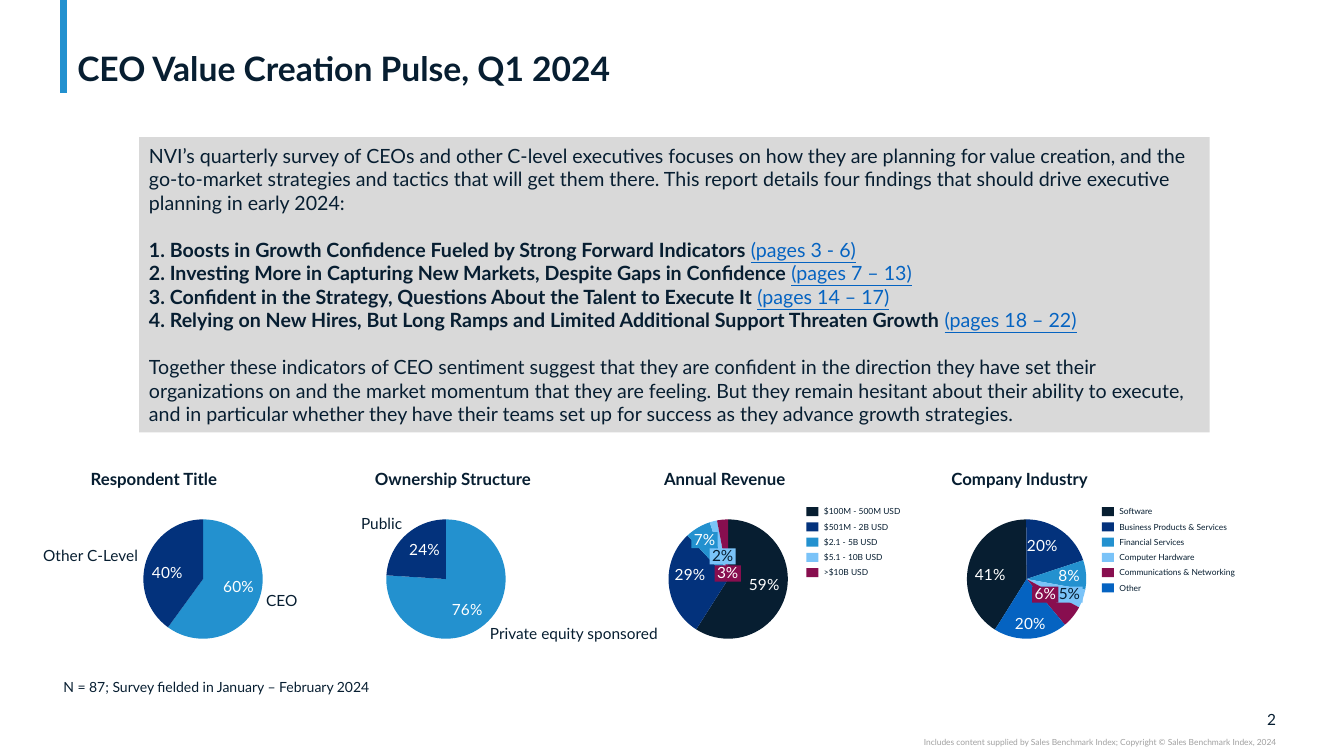
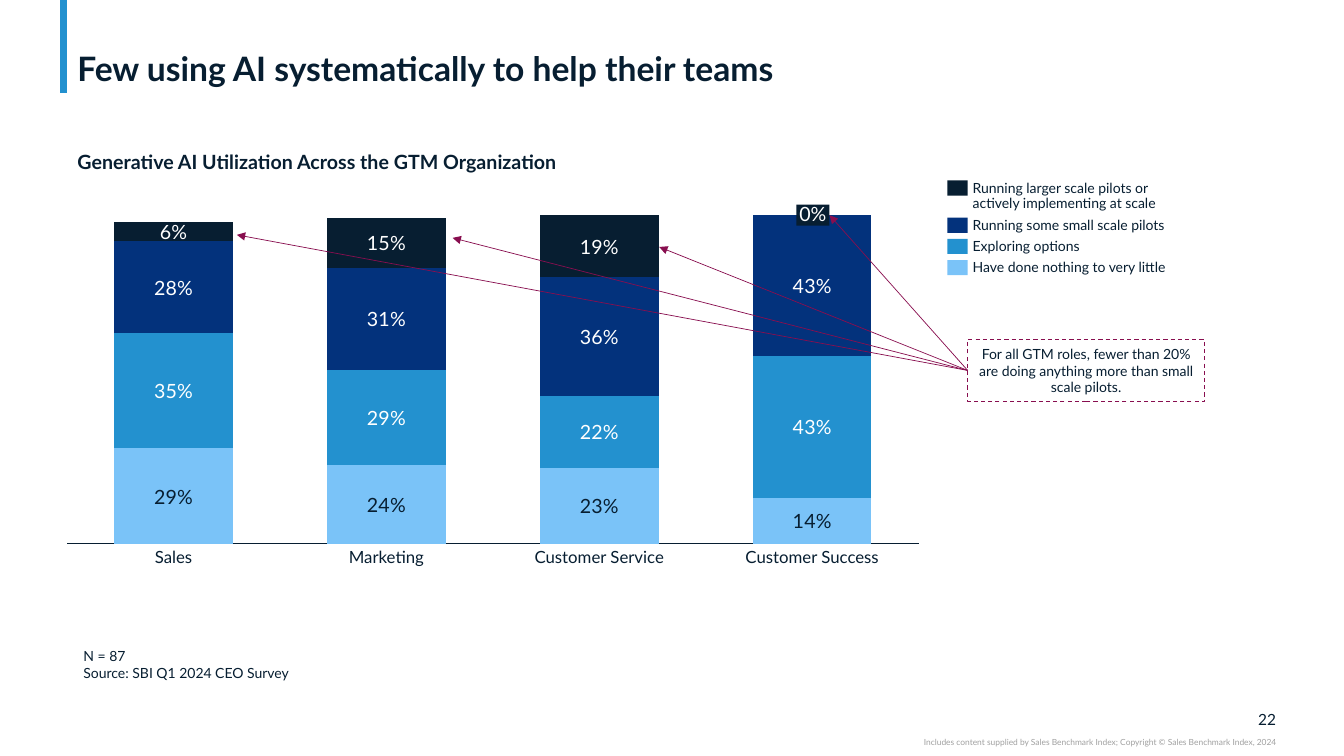
from lxml import etree
from pptx import Presentation
from pptx import util as u
from pptx.chart.data import CategoryChartData
from pptx.dml.color import RGBColor
from pptx.enum import chart as charts, dml, shapes, text
from pptx.oxml.ns import qn


class Theme:
    font = "Lato"
    ink = RGBColor.from_string("071E31")
    navy = RGBColor.from_string("03327C")
    blue = RGBColor.from_string("2391CF")
    sky = RGBColor.from_string("7AC3F8")
    wine = RGBColor.from_string("880E4F")
    link = RGBColor.from_string("0563C1")
    panel = RGBColor.from_string("D9D9D9")
    muted = RGBColor.from_string("A0A0A0")
    white = RGBColor.from_string("FFFFFF")
    title, body, heading, label, note, tiny = (u.Pt(size) for size in (24, 14, 12, 11, 10, 6))


LEFT, CENTER, RIGHT = text.PP_ALIGN.LEFT, text.PP_ALIGN.CENTER, text.PP_ALIGN.RIGHT
COLUMNS, ROWS = 80, 45

presentation = Presentation()
presentation.slide_width, presentation.slide_height = u.Inches(13.333), u.Inches(7.5)
column = presentation.slide_width / COLUMNS
row = presentation.slide_height / ROWS


def place(left, top, width, height):
    return int(left * column), int(top * row), int(width * column), int(height * row)


def add_box(slide, area, words, size, color=Theme.ink, bold=False, align=LEFT,
            padded=False, fill=None, outline=None):
    if fill is None and outline is None:
        shape = slide.shapes.add_textbox(*place(*area))
    else:
        shape = slide.shapes.add_shape(shapes.MSO_SHAPE.RECTANGLE, *place(*area))
        shape.shadow.inherit = False
        if fill is None:
            shape.fill.background()
        else:
            shape.fill.solid()
            shape.fill.fore_color.rgb = fill
        if outline is None:
            shape.line.fill.background()
        else:
            shape.line.color.rgb = outline
            shape.line.width = u.Pt(0.75)
            shape.line.dash_style = dml.MSO_LINE.DASH
    frame = shape.text_frame
    frame.word_wrap = True
    frame.vertical_anchor = text.MSO_ANCHOR.MIDDLE
    if not padded:
        frame.margin_left = frame.margin_right = frame.margin_top = frame.margin_bottom = 0
    frame.text = words
    for paragraph in frame.paragraphs:
        paragraph.alignment = align
        paragraph.line_spacing = 1.0 if padded else 0.9
        for run in paragraph.runs:
            run.font.name, run.font.size = Theme.font, size
            run.font.bold, run.font.color.rgb = bold, color
    return shape


slides = []
for title, number in (
    ("CEO Value Creation Pulse, Q1 2024", "2"),
    ("Few using AI systematically to help their teams", "22"),
):
    slide = presentation.slides.add_slide(presentation.slide_layouts[5])
    slides.append(slide)
    band = slide.shapes.add_connector(shapes.MSO_CONNECTOR.STRAIGHT, *place(3.78, 0, 3.78, 5.52))
    band.line.color.rgb, band.line.width = Theme.blue, u.Pt(5)
    etree.SubElement(band._element.spPr, qn("a:effectLst"))
    add_box(slide, (70, 42.3, 5.96, 1.14), number, Theme.label, align=RIGHT)
    add_box(slide, (45, 43.92, 30.96, 0.6),
            "Includes content supplied by Sales Benchmark Index; Copyright © Sales Benchmark Index, 2024",
            Theme.tiny, Theme.muted, align=RIGHT)
    heading = slide.shapes.title
    heading.left, heading.top, heading.width, heading.height = place(4, 0.24, 72, 5.04)
    frame = heading.text_frame
    frame.text = title
    frame.auto_size = text.MSO_AUTO_SIZE.NONE
    frame.vertical_anchor = text.MSO_ANCHOR.BOTTOM
    frame.margin_top = frame.margin_bottom = 0
    paragraph = frame.paragraphs[0]
    paragraph.alignment, paragraph.line_spacing = LEFT, 0.9
    font = paragraph.runs[0].font
    font.name, font.size, font.bold, font.color.rgb = Theme.font, Theme.title, True, Theme.ink

overview, utilization = slides
drawn_charts = []

findings = (
    ("1. Boosts in Growth Confidence Fueled by Strong Forward Indicators ", "(pages 3 - 6)"),
    ("2. Investing More in Capturing New Markets, Despite Gaps in Confidence ", "(pages 7 – 13)"),
    ("3. Confident in the Strategy, Questions About the Talent to Execute It ", "(pages 14 – 17)"),
    ("4. Relying on New Hires, But Long Ramps and Limited Additional Support Threaten Growth ",
     "(pages 18 – 22)"),
)
introduction = (
    "NVI’s quarterly survey of CEOs and other C-level executives focuses on how they are planning "
    "for value creation, and the go-to-market strategies and tactics that will get them there. This "
    "report details four findings that should drive executive planning in early 2024:"
)
conclusion = (
    "Together these indicators of CEO sentiment suggest that they are confident in the direction "
    "they have set their organizations on and the market momentum that they are feeling. But they "
    "remain hesitant about their ability to execute, and in particular whether they have their "
    "teams set up for success as they advance growth strategies."
)
summary = add_box(overview, (8.28, 8.16, 63.72, 17.58),
                  "\n".join([introduction, *(finding for finding, pages in findings), conclusion]),
                  Theme.body, padded=True, fill=Theme.panel)
paragraphs = summary.text_frame.paragraphs
for paragraph, (finding, pages) in zip(paragraphs[1:-1], findings):
    paragraph.runs[0].font.bold = True
    run = paragraph.add_run()
    run.text = pages
    run.font.name, run.font.size = Theme.font, Theme.body
    run.font.color.rgb, run.font.underline = Theme.link, True
for paragraph in (paragraphs[1], paragraphs[-1]):
    paragraph.space_before = u.Pt(16.8)

revenue_colors = (Theme.ink, Theme.navy, Theme.blue, Theme.sky, Theme.wine)
pies = (
    ("Respondent Title", 4.8, 4.56, (60, 40), (Theme.blue, Theme.navy), 0),
    ("Ownership Structure", 21.72, 19.02, (76, 24), (Theme.blue, Theme.navy), 0),
    ("Annual Revenue", 38.94, 35.82, (59, 29, 7, 2, 3), revenue_colors, 0),
    ("Company Industry", 56.04, 53.58, (41, 20, 8, 5, 6, 20), (*revenue_colors, Theme.link), 212),
)
for name, heading_left, pie_left, values, colors, start in pies:
    add_box(overview, (heading_left, 27.6, 16, 1.8), name, Theme.heading, bold=True, padded=True)
    data = CategoryChartData()
    data.categories = [str(index + 1) for index in range(len(values))]
    data.add_series("Series 1", values)
    chart = overview.shapes.add_chart(charts.XL_CHART_TYPE.PIE,
                                      *place(pie_left, 28.74, 15.06, 11.46), data).chart
    drawn_charts.append((chart, (0.26, 0.19, 0.48, 0.62)))
    plot = chart.plots[0]
    plot.vary_by_categories = False
    for index, color in enumerate(colors):
        fill = plot.series[0].points[index].format.fill
        fill.solid()
        fill.fore_color.rgb = color
    labels = plot.series[0].data_labels
    labels.show_value = True
    labels.number_format, labels.number_format_is_linked = '[<8]"";0"%"', False
    labels.position = charts.XL_LABEL_POSITION.INSIDE_END
    labels.font.name, labels.font.size = Theme.font, Theme.label
    labels.font.color.rgb = Theme.white
    pie = chart._chartSpace.find(".//" + qn("c:pieChart"))
    angle = pie.find(qn("c:firstSliceAng"))
    if angle is None:
        angle = etree.SubElement(pie, qn("c:firstSliceAng"))
    angle.set("val", str(start))

for words, left, top, width, align in (
    ("CEO", 15.84, 35.34, 3, LEFT),
    ("Other C-Level", 1.2, 32.64, 7.02, RIGHT),
    ("Private equity sponsored", 29.16, 37.26, 11, LEFT),
    ("Public", 20.4, 30.72, 3.54, RIGHT),
):
    add_box(overview, (left, top, width, 0.96), words, Theme.label, align=align)

for words, left, top, fill, color in (
    ("7%", 41.16, 31.68, Theme.blue, Theme.white),
    ("2%", 42.24, 32.64, Theme.sky, Theme.ink),
    ("3%", 42.54, 33.66, Theme.wine, Theme.white),
    ("5%", 62.88, 34.92, Theme.sky, Theme.ink),
    ("6%", 61.44, 34.92, Theme.wine, Theme.white),
):
    add_box(overview, (left, top, 1.56, 0.96), words, Theme.label, color, align=CENTER, fill=fill)

for left, names in (
    (48, ("$100M - 500M USD", "$501M - 2B USD", "$2.1 - 5B USD", "$5.1 - 10B USD", ">$10B USD")),
    (65.58, ("Software", "Business Products & Services", "Financial Services",
             "Computer Hardware", "Communications & Networking", "Other")),
):
    for index, (name, color) in enumerate(zip(names, (*revenue_colors, Theme.link))):
        top = 30.18 + index * 0.91
        add_box(overview, (left, top, 0.72, 0.54), "", Theme.tiny, fill=color)
        add_box(overview, (left + 1.05, top + 0.03, 9, 0.54), name, Theme.tiny)

add_box(overview, (3.18, 40.08, 68, 1.62), "N = 87; Survey fielded in January – February 2024",
        Theme.note, padded=True)

add_box(utilization, (4.02, 8.58, 43.2, 2.04),
        "Generative AI Utilization Across the GTM Organization", Theme.body, bold=True, padded=True)

roles = ("Sales", "Marketing", "Customer Service", "Customer Success")
stages = (
    ((29, 24, 23, 14), Theme.sky, Theme.ink),
    ((35, 29, 22, 43), Theme.blue, Theme.white),
    ((28, 31, 36, 43), Theme.navy, Theme.white),
    ((6, 15, 19, 0), Theme.ink, Theme.white),
)
data = CategoryChartData()
data.categories = [str(index + 1) for index in range(len(roles))]
for index, (values, fill, color) in enumerate(stages):
    data.add_series(f"Series {index + 1}", values)
chart = utilization.shapes.add_chart(charts.XL_CHART_TYPE.COLUMN_STACKED,
                                     *place(3.48, 10.8, 51.78, 23.58), data).chart
drawn_charts.append((chart, (0.01, 0.085, 0.979, 0.83)))
plot = chart.plots[0]
plot.vary_by_categories = False
plot.gap_width, plot.overlap = 80, 100
for series, (values, fill, color) in zip(plot.series, stages):
    series.format.fill.solid()
    series.format.fill.fore_color.rgb = fill
    labels = series.data_labels
    labels.show_value = True
    labels.number_format, labels.number_format_is_linked = '[<1]"";0"%"', False
    labels.position = charts.XL_LABEL_POSITION.CENTER
    labels.font.name, labels.font.size, labels.font.color.rgb = Theme.font, Theme.body, color
value_axis, category_axis = chart.value_axis, chart.category_axis
value_axis.minimum_scale, value_axis.maximum_scale = 0, 100
value_axis.has_major_gridlines = value_axis.visible = False
category_axis.tick_label_position = charts.XL_TICK_LABEL_POSITION.NONE
category_axis.major_tick_mark = category_axis.minor_tick_mark = charts.XL_TICK_MARK.NONE
category_axis.format.line.color.rgb = Theme.ink
category_axis.format.line.width = u.Pt(0.75)

role_width = 12.67
for index, role in enumerate(roles):
    add_box(utilization, (4 + index * role_width, 32.7, role_width, 1.08), role,
            Theme.heading, align=CENTER)
zero_label = add_box(utilization, (47.4, 12.18, 1.98, 1.26), "0%", Theme.body, Theme.white,
                     align=CENTER, fill=Theme.ink)

for name, color, top, height in (
    ("Running larger scale pilots or\vactively implementing at scale", Theme.ink, 10.74, 1.8),
    ("Running some small scale pilots", Theme.navy, 12.96, 0.9),
    ("Exploring options", Theme.blue, 14.22, 0.9),
    ("Have done nothing to very little", Theme.sky, 15.48, 0.9),
):
    add_box(utilization, (56.4, top, 1.2, 0.9), "", Theme.note, fill=color)
    add_box(utilization, (57.9, top + 0.05, 14, height), name, Theme.note)

add_box(utilization, (4.38, 38.22, 39.54, 2.64), "N = 87\nSource: SBI Q1 2024 CEO Survey",
        Theme.note, padded=True)
callout = add_box(utilization, (57.6, 20.22, 14.1, 3.66),
                  "For all GTM roles, fewer than 20% are doing anything more than small scale pilots.",
                  Theme.note, align=CENTER, padded=True, outline=Theme.wine)
arrows = []
for end in ((49.38, 12.81), (14.1, 13.98), (26.94, 14.16), (39.24, 14.7)):
    arrow = utilization.shapes.add_connector(shapes.MSO_CONNECTOR.STRAIGHT,
                                             *place(57.6, 22.05, *end))
    arrow.begin_connect(callout, 1)
    arrow.line.color.rgb, arrow.line.width = Theme.wine, u.Pt(0.5)
    properties = arrow._element.spPr
    etree.SubElement(properties.find(qn("a:ln")), qn("a:tailEnd"), type="triangle")
    etree.SubElement(properties, qn("a:effectLst"))
    arrows.append(arrow)
arrows[0].end_connect(zero_label, 1 + 2)

for chart, area in drawn_charts:
    chart.has_title = chart.has_legend = False
    chart.font.name, chart.font.size, chart.font.color.rgb = Theme.font, Theme.note, Theme.ink
    plot_area = chart._chartSpace.find(".//" + qn("c:plotArea"))
    for layout in plot_area.findall(qn("c:layout")):
        plot_area.remove(layout)
    layout = etree.Element(qn("c:layout"))
    plot_area.insert(0, layout)
    manual = etree.SubElement(layout, qn("c:manualLayout"))
    settings = (("layoutTarget", "inner"), ("xMode", "edge"), ("yMode", "edge"),
                *zip("xywh", area))
    for tag, value in settings:
        etree.SubElement(manual, qn(f"c:{tag}"), val=str(value))

presentation.save("out.pptx")
